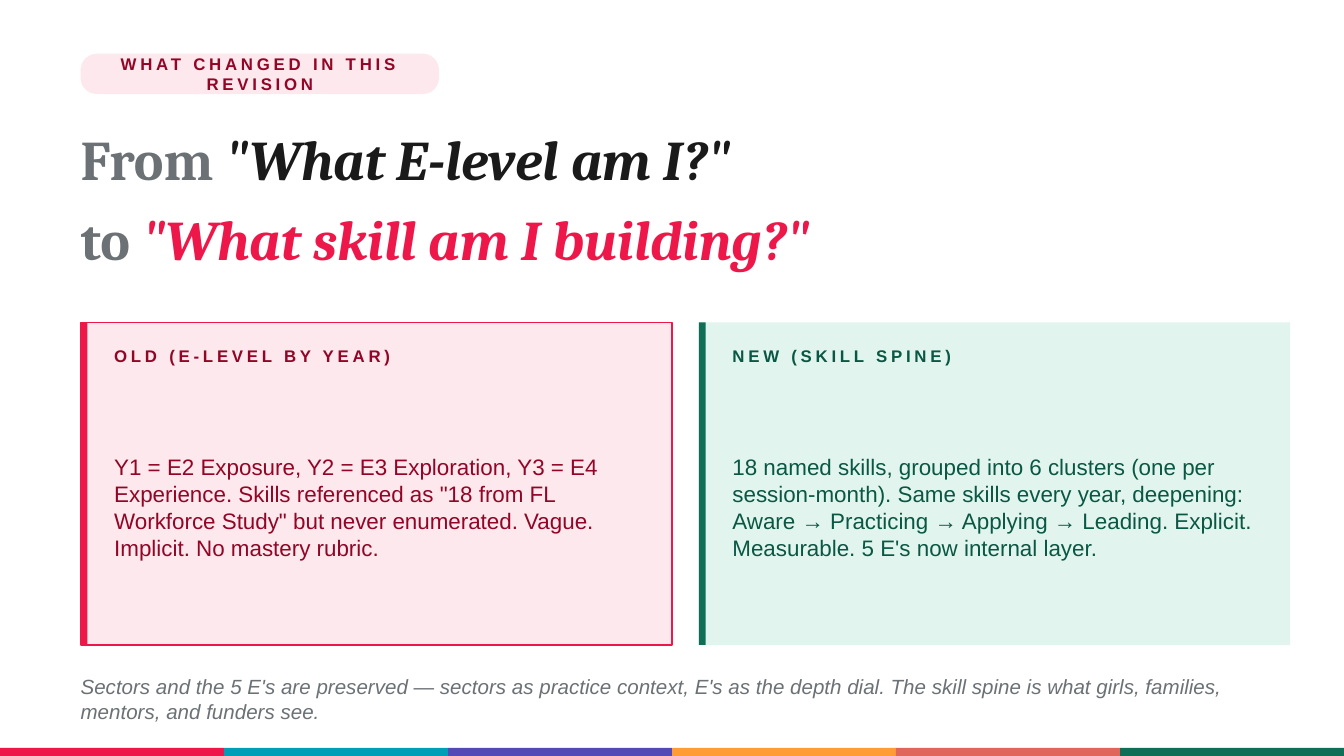
from pptx import Presentation
from pptx.util import Pt
from pptx.dml.color import RGBColor as RGB
from pptx.enum.shapes import MSO_SHAPE as SHAPE
from pptx.enum.text import MSO_ANCHOR as ANCHOR, MSO_AUTO_SIZE as AUTOSIZE, PP_ALIGN as ALIGN

THEME = {
    "red": "ED1849", "dark_red": "920526", "pale_red": "FDE8ED",
    "green": "0F6E56", "dark_green": "0A5743", "pale_green": "E1F5EE",
    "grey": "6B7175", "ink": "1A1A1A",
    "stripe": ["ED1849", "009FB7", "534AB7", "FF9C33", "E0655A", "0F6E56"],
    "title": {"name": "Cambria", "size": Pt(30), "bold": True},
    "label": {"name": "Arial", "size": Pt(9), "bold": True},
    "body": {"name": "Arial", "size": Pt(12)},
    "note": {"name": "Arial", "size": Pt(11), "italic": True},
}
FRAME = {
    "margin_left": 0, "margin_top": 0, "margin_right": 0, "margin_bottom": 0,
    "word_wrap": True, "auto_size": AUTOSIZE.NONE, "vertical_anchor": ANCHOR.MIDDLE,
}

prs = Presentation()
prs.slide_width, prs.slide_height = Pt(720), Pt(405)
s = prs.slides.add_slide(prs.slide_layouts[5])


def add_block(kind, x, y, w, h, fill, line=None):
    sp = s.shapes.add_shape(kind, Pt(x), Pt(y), Pt(w), Pt(h))
    sp.shadow.inherit = False
    sp.fill.solid()
    sp.fill.fore_color.rgb = RGB.from_string(fill)
    if line:
        sp.line.color.rgb = RGB.from_string(line)
        sp.line.width = Pt(1)
    else:
        sp.line.fill.background()
    return sp


def add_text(sp, box, lines, style, align=ALIGN.LEFT, spacing=None, tracking=0):
    sp.left, sp.top, sp.width, sp.height = [Pt(v) for v in box]
    tf = sp.text_frame
    for key, value in FRAME.items():
        setattr(tf, key, value)
    for i, runs in enumerate(lines):
        p = tf.add_paragraph() if i else tf.paragraphs[0]
        p.alignment = align
        p.line_spacing = spacing
        for text, color, extra in runs:
            r = p.add_run()
            r.text = text
            for key, value in {**THEME[style], **extra}.items():
                setattr(r.font, key, value)
            r.font.color.rgb = RGB.from_string(THEME[color])
            if tracking:
                r._r.get_or_add_rPr().set("spc", str(tracking))


italic = {"italic": True}
add_text(s.shapes.title, (43.2, 61.2, 648, 82.8), [
    [("From ", "grey", {}), ('"What E-level am I?"', "ink", italic)],
    [("to ", "grey", {}), ('"What skill am I building?"', "red", italic)],
], "title", spacing=Pt(43.2))

pill = add_block(SHAPE.ROUNDED_RECTANGLE, 43.2, 28.8, 192, 21.6, THEME["pale_red"])
pill.adjustments[0] = 0.4

cards = [
    (43.2, "red", THEME["red"], "OLD (E-LEVEL BY YEAR)",
     'Y1 = E2 Exposure, Y2 = E3 Exploration, Y3 = E4 Experience. Skills referenced as '
     '"18 from FL Workforce Study" but never enumerated. Vague. Implicit. No mastery rubric.'),
    (374.4, "green", None, "NEW (SKILL SPINE)",
     "18 named skills, grouped into 6 clusters (one per session-month). Same skills every year, "
     "deepening: Aware → Practicing → Applying → Leading. Explicit. Measurable. "
     "5 E's now internal layer."),
]
texts = [
    ((43.2, 28.8, 192, 21.6), "WHAT CHANGED IN THIS REVISION", "dark_red", "label", ALIGN.CENTER, 200),
    ((43.2, 360, 648, 28.8),
     "Sectors and the 5 E's are preserved — sectors as practice context, E's as the depth dial. "
     "The skill spine is what girls, families, mentors, and funders see.",
     "grey", "note", ALIGN.LEFT, 0),
]
for x, hue, line, heading, body in cards:
    add_block(SHAPE.RECTANGLE, x, 172.8, 316.8, 172.8, THEME["pale_" + hue], line)
    add_block(SHAPE.RECTANGLE, x, 172.8, 3.6, 172.8, THEME[hue])
    texts += [
        ((x + 18, 180, 288, 21.6), heading, "dark_" + hue, "label", ALIGN.LEFT, 200),
        ((x + 18, 205.2, 288, 133.2), body, "dark_" + hue, "body", ALIGN.LEFT, 0),
    ]

for box, text, color, style, align, tracking in texts:
    add_text(s.shapes.add_textbox(0, 0, 0, 0), box, [[(text, color, {})]], style, align, tracking=tracking)

for i, color in enumerate(THEME["stripe"]):
    add_block(SHAPE.RECTANGLE, i * 120, 400.7, 120, 4.3, color)

prs.save("out.pptx")
